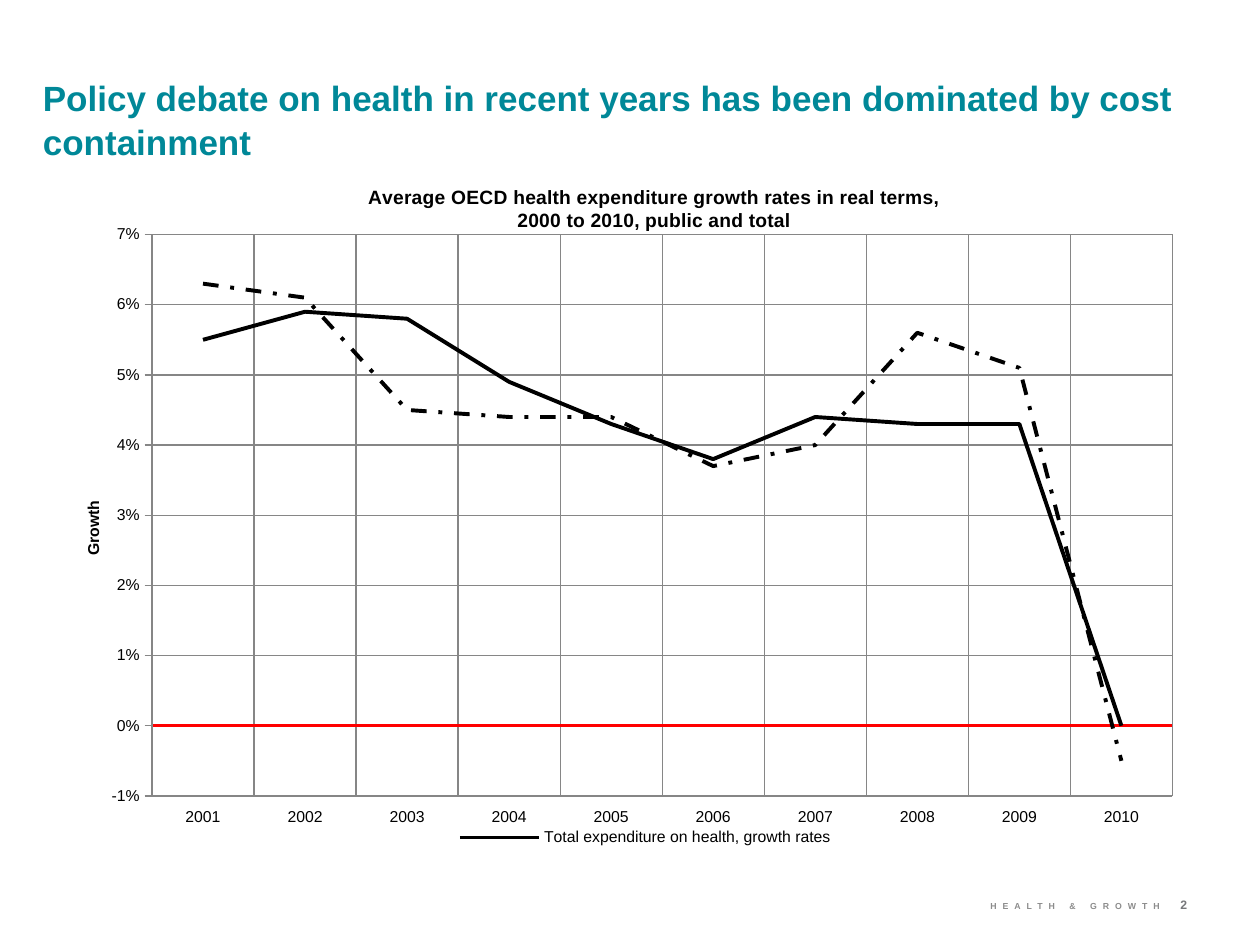
from lxml import etree
from pptx import Presentation
from pptx import util as u
from pptx.chart.data import CategoryChartData
from pptx.dml.color import RGBColor
from pptx.enum import chart as ch, dml, text
from pptx.oxml.ns import qn

Pt = u.Pt
FONT = "Arial"
TEAL = RGBColor(0x00, 0x88, 0x98)
FOOTER_GRAY = RGBColor(0x8C, 0x8C, 0x8C)
NUMBER_GRAY = RGBColor(0x77, 0x78, 0x7B)
GRID_GRAY = RGBColor(0x86, 0x86, 0x86)
BLACK = RGBColor(0, 0, 0)
RED = RGBColor(0xFF, 0, 0)

YEARS = [str(year) for year in range(2001, 2011)]
TOTAL = (0.055, 0.059, 0.058, 0.049, 0.043, 0.038, 0.044, 0.043, 0.043, 0)
PUBLIC = (0.063, 0.061, 0.045, 0.044, 0.044, 0.037, 0.04, 0.056, 0.051, -0.005)


def style_font(font, size, color, bold=False):
    font.name, font.size, font.bold = FONT, Pt(size), bold
    font.color.rgb = color


def style_line(line, color, width):
    line.color.rgb = color
    line.width = Pt(width)


def add_label(slide, box, words, size, color, align=text.PP_ALIGN.LEFT):
    """Place bold text without margins; box is left, top, width, height."""
    frame = slide.shapes.add_textbox(*map(Pt, box)).text_frame
    frame.word_wrap = True
    frame.margin_left = frame.margin_right = 0
    frame.margin_top = frame.margin_bottom = 0
    paragraph = frame.paragraphs[0]
    paragraph.text = words
    paragraph.alignment = align
    style_font(paragraph.runs[0].font, size, color, bold=True)
    return paragraph


def set_layout(parent, after, x, y, w=None, h=None, inner=False):
    """Fix a chart part's place, as fractions of the chart's size."""
    for old in parent.findall(qn("c:layout")):
        parent.remove(old)
    layout = etree.Element(qn("c:layout"))
    manual = etree.SubElement(layout, qn("c:manualLayout"))
    settings = [("layoutTarget", "inner" if inner else None),
                ("xMode", "edge"), ("yMode", "edge"),
                ("x", x), ("y", y), ("w", w), ("h", h)]
    for tag, value in settings:
        if value is not None:
            etree.SubElement(manual, qn("c:" + tag), val=str(value))
    previous = parent.find(qn(after)) if after else None
    parent.insert(0 if previous is None else parent.index(previous) + 1, layout)


def add_heading(slide, box):
    heading = add_label(
        slide, box,
        "Policy debate on health in recent years has been dominated by cost containment",
        20, TEAL)
    heading.line_spacing = 1.05


def add_footer(slide, box):
    left, top, width, height = box
    running = add_label(slide, (left, top + 2, 221, height - 2), "HEALTH & GROWTH",
                        5, FOOTER_GRAY, text.PP_ALIGN.RIGHT)
    running.runs[0].font._element.set("spc", "340")
    add_label(slide, (left + 232.5, top, width - 232.5, height), "2", 7, NUMBER_GRAY)


def style_axes(chart):
    years, growth = chart.category_axis, chart.value_axis
    for axis in (years, growth):
        axis.has_major_gridlines = True
        style_line(axis.major_gridlines.format.line, GRID_GRAY, 0.75)
        style_font(axis.tick_labels.font, 9, BLACK)

    # The year axis is the red zero line
    years.tick_label_position = ch.XL_TICK_LABEL_POSITION.LOW
    years.major_tick_mark = ch.XL_TICK_MARK.NONE
    style_line(years.format.line, RED, 1.5)

    growth.minimum_scale, growth.maximum_scale = -0.01, 0.07
    growth.major_unit = 0.01
    growth.major_tick_mark = ch.XL_TICK_MARK.OUTSIDE
    growth.tick_labels.number_format = "0%"
    growth.tick_labels.number_format_is_linked = False
    style_line(growth.format.line, GRID_GRAY, 0.75)
    caption = growth.axis_title.text_frame.paragraphs[0]
    caption.text = "Growth"
    style_font(caption.runs[0].font, 9, BLACK, bold=True)
    set_layout(growth.axis_title._element, "c:tx", 0.005, 0.473)


def style_legend(chart):
    chart.has_legend = True
    legend = chart.legend
    legend.position = ch.XL_LEGEND_POSITION.BOTTOM
    legend.include_in_layout = False
    style_font(legend.font, 9, BLACK)
    # Only the total is listed
    position = legend._element.find(qn("c:legendPos"))
    entry = etree.Element(qn("c:legendEntry"))
    etree.SubElement(entry, qn("c:idx"), val="1")
    etree.SubElement(entry, qn("c:delete"), val="1")
    position.addnext(entry)
    set_layout(legend._element, "c:legendEntry", 0.33, 0.917, 0.34, 0.035)


def add_growth_chart(slide, box):
    data = CategoryChartData(number_format="0.0%")
    data.categories = YEARS
    data.add_series("Total expenditure on health, growth rates", TOTAL)
    data.add_series("Public expenditure on health, growth rates", PUBLIC)
    chart = slide.shapes.add_chart(ch.XL_CHART_TYPE.LINE, *map(Pt, box), data).chart
    style_font(chart.font, 9, BLACK)

    # Chart title
    chart.has_title = True
    title = chart.chart_title
    title.text_frame.text = ("Average OECD health expenditure growth rates in real terms,\n"
                             "2000 to 2010, public and total")
    for paragraph in title.text_frame.paragraphs:
        style_font(paragraph.runs[0].font, 11, BLACK, bold=True)
    title.include_in_layout = True
    set_layout(title._element, "c:tx", 0.254, 0.041)

    # Lines
    plot = chart.plots[0]
    plot.vary_by_categories = False
    dashes = (dml.MSO_LINE.SOLID, dml.MSO_LINE.DASH_DOT)
    for series, dash in zip(plot.series, dashes):
        series.smooth = False
        series.marker.style = ch.XL_MARKER_STYLE.NONE
        style_line(series.format.line, BLACK, 2.25)
        series.format.line.dash_style = dash

    style_axes(chart)
    style_legend(chart)
    plot_area = chart._chartSpace.chart.plotArea
    set_layout(plot_area, None, 0.068, 0.115, 0.894, 0.763, inner=True)


def main():
    deck = Presentation()
    deck.slide_width, deck.slide_height = Pt(720), Pt(540)
    slide = deck.slides.add_slide(deck.slide_layouts[6])
    add_heading(slide, (24.5, 42.5, 672, 48))
    add_footer(slide, (442, 512.5, 263.5, 12.5))
    add_growth_chart(slide, (42.5, 85.7, 652.3, 420.5))
    deck.save("out.pptx")


if __name__ == "__main__":
    main()
